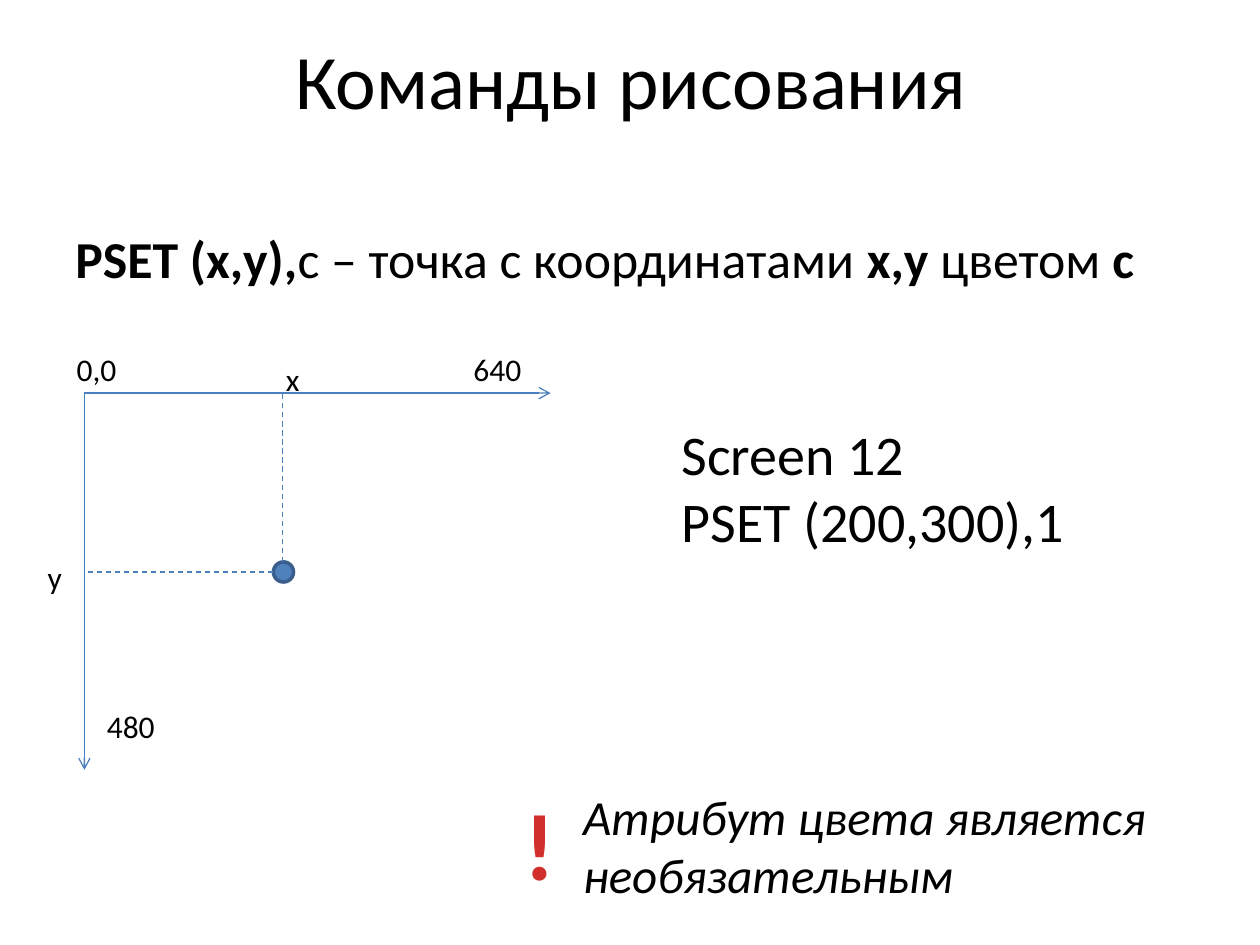
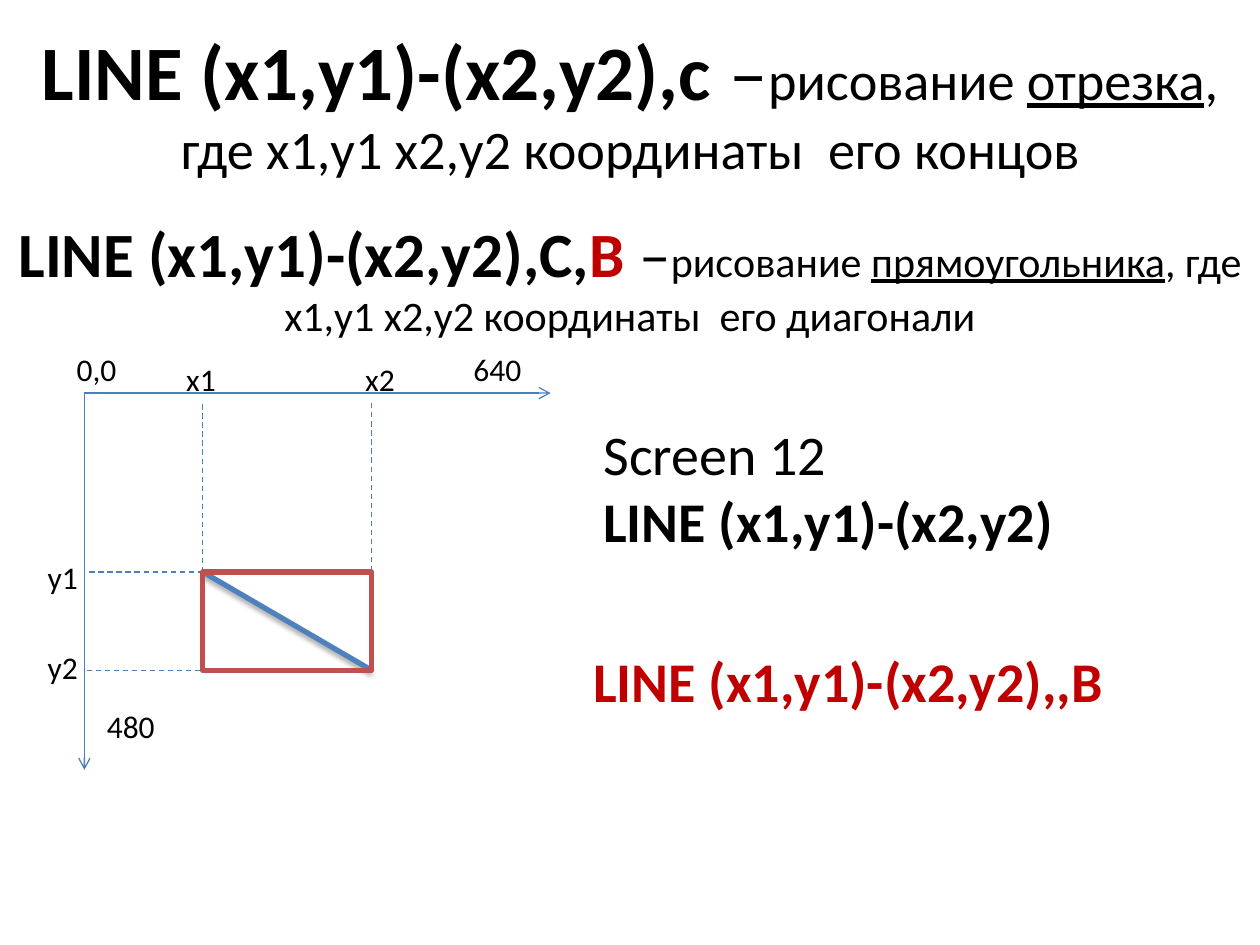
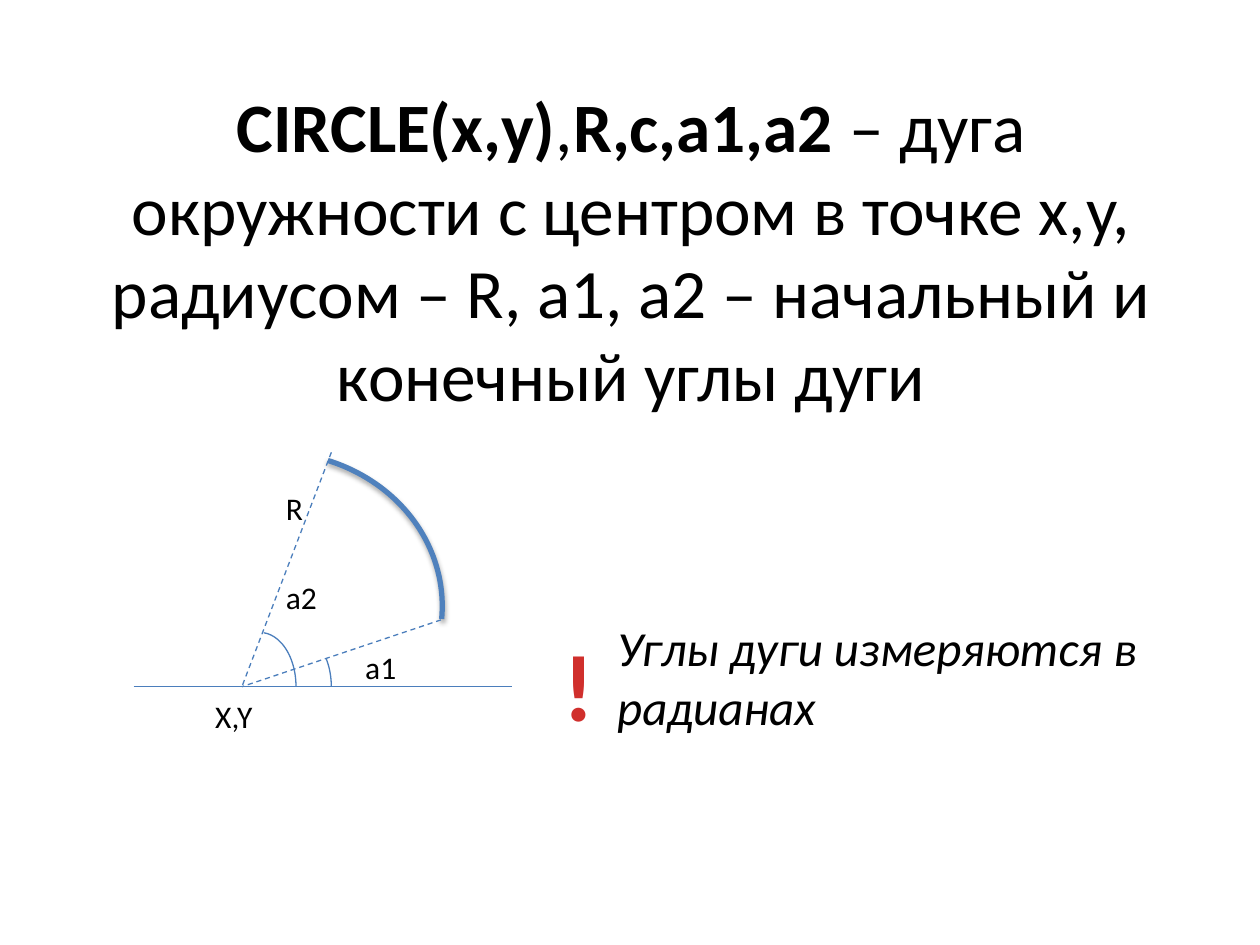
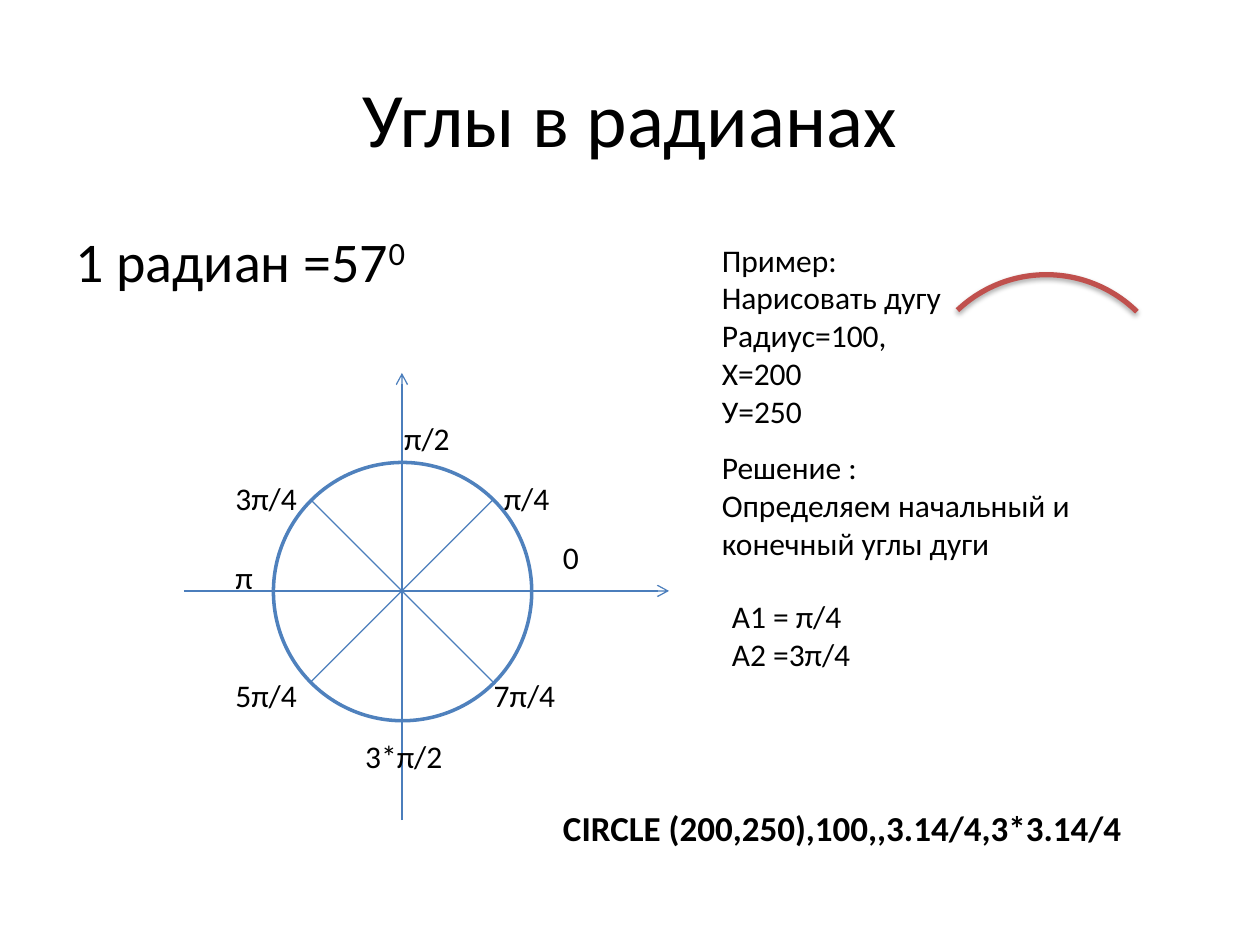
from pptx import Presentation
from pptx.dml.color import RGBColor
from pptx.enum.dml import MSO_LINE
from pptx.enum.shapes import MSO_CONNECTOR, MSO_SHAPE as Form
from pptx.enum.text import MSO_ANCHOR as Anchor, PP_ALIGN as Align
from pptx.oxml import parse_xml
from pptx.oxml.ns import nsdecls, qn
from pptx.util import Inches, Pt
from lxml.etree import SubElement

FONT = "Calibri"
BLACK = RGBColor(0x00, 0x00, 0x00)
BLUE = RGBColor(0x4F, 0x81, 0xBD)
THIN = RGBColor(0x4B, 0x7E, 0xBC)
EDGE = RGBColor(0x3A, 0x5F, 0x8C)
BRICK = RGBColor(0xC0, 0x50, 0x4D)
RED = RGBColor(0xC0, 0x00, 0x00)
GLOW = ((0, RGBColor(0xFC, 0x7C, 0x7A)),
        (75, RGBColor(0xD0, 0x2F, 0x2C)),
        (100, RGBColor(0xC7, 0x05, 0x00)))
BOLD = {"bold": True}
UNDER = {"underline": True}


def style(font, size=None, bold=None, italic=None, underline=None, color=None):
    if size:
        font.size = Pt(size)
    font.bold, font.italic, font.underline = bold, italic, underline
    if color is not None:
        font.color.rgb = color


def text(shapes, box, paras, size=18, align=Align.LEFT, anchor=Anchor.TOP,
         wrap=True, hang=0, color=BLACK, **look):
    """Add a text box; a paragraph is a string or a list of (text, look) runs."""
    shape = shapes.add_textbox(*map(Inches, box))
    frame = shape.text_frame
    frame.word_wrap, frame.vertical_anchor = wrap, anchor
    for i, runs in enumerate(paras):
        para = frame.add_paragraph() if i else frame.paragraphs[0]
        para.alignment = align
        if hang:
            props = para._p.get_or_add_pPr()
            props.set("marL", str(Inches(hang)))
            props.set("indent", str(-Inches(hang)))
            SubElement(props, qn("a:buNone"))
        para.font.name = FONT
        style(para.font, size, color=color, **look)
        for words, own in [(runs, {})] if isinstance(runs, str) else runs:
            run = para.add_run()
            run.text = words
            style(run.font, **own)
    return shape


def title(slide, box, runs, size=44):
    text(slide.shapes, box, [runs], size, Align.CENTER, Anchor.MIDDLE)


def label(shapes, x, y, words, wide=0.71):
    text(shapes, (x, y, wide, 0.4), [words])


def shade(shape):
    """Give a soft shadow below the shape."""
    effects = shape._element.spPr.find(qn("a:effectLst"))
    effects.append(parse_xml(
        f'<a:outerShdw {nsdecls("a")} blurRad="{Pt(3.1)}" dist="{Pt(1.8)}" '
        'dir="5400000" rotWithShape="0"><a:srgbClr val="000000">'
        '<a:alpha val="35000"/></a:srgbClr></a:outerShdw>'))


def line(shapes, start, end, color=THIN, width=0.75, dash=False, arrow=False):
    link = shapes.add_connector(MSO_CONNECTOR.STRAIGHT,
                                *map(Inches, (*start, *end)))
    link.line.color.rgb, link.line.width = color, Pt(width)
    if dash:
        link.line.dash_style = MSO_LINE.DASH
    if arrow:
        SubElement(link.line._get_or_add_ln(), qn("a:tailEnd"), type="arrow")
    SubElement(link._element.spPr, qn("a:effectLst"))
    return link


def form(shapes, kind, box, color, width, fill=None, angles=()):
    shape = shapes.add_shape(kind, *map(Inches, box))
    shape.shadow.inherit = False
    shape.line.color.rgb, shape.line.width = color, Pt(width)
    if fill is None:
        shape.fill.background()
    else:
        shape.fill.solid()
        shape.fill.fore_color.rgb = fill
    for i, angle in enumerate(angles):
        shape.adjustments[i] = angle * 0.6  # degrees to sixty-thousandths
    return shape


def axes(slide, x, y):
    """Draw the screen axes from their origin."""
    parts = slide.shapes.add_group_shape().shapes
    for end in ((x + 3.7, y), (x, y + 2.99)):
        line(parts, (x, y), end, arrow=True)
    for dx, dy, words in ((-0.16, -0.39, "0,0"), (2.99, -0.39, "640"),
                          (0.08, 2.44, "480")):
        label(parts, x + dx, y + dy, words, 0.63)


def remark(slide, mark, note, words):
    """Place a red exclamation mark and an italic note."""
    text(slide.shapes, (*note, 5.2, 1.04), [words], 28, italic=True)
    sign = text(slide.shapes, (*mark, 0.45, 1.01), ["!"], 54, Align.CENTER,
                wrap=False, bold=True)
    stops = "".join(f'<a:gs pos="{at * 1000}"><a:srgbClr val="{tone}"/></a:gs>'
                    for at, tone in GLOW)
    run = sign.text_frame.paragraphs[0].runs[0]
    run._r.get_or_add_rPr().append(parse_xml(
        f'<a:gradFill {nsdecls("a")}><a:gsLst>{stops}</a:gsLst>'
        '<a:lin ang="5400000"/></a:gradFill>'))


def point_slide(slide):
    shapes = slide.shapes
    title(slide, (0.51, 0, 9, 1.25), "Команды рисования")
    text(shapes, (0.5, 1.75, 9, 0.66), [[
        ("PSET (x,y),", BOLD), ("c – точка с координатами ", {}),
        ("x,y ", BOLD), ("цветом", {}), (" с", BOLD)]], 29.6, hang=0.38)
    x, y = 0.67, 3.12
    axes(slide, x, y)
    form(shapes, Form.OVAL, (x + 1.5, y + 1.34, 0.16, 0.16), EDGE, 2, BLUE)
    line(shapes, (x + 1.57, y + 1.34), (x + 1.57, y), dash=True)
    line(shapes, (x + 1.5, y + 1.42), (x, y + 1.42), dash=True)
    label(shapes, x + 1.5, y - 0.31, "x", 0.39)
    label(shapes, x - 0.39, y + 1.26, "y", 0.39)
    text(shapes, (5.31, 3.28, 3.7, 1.18), ["Screen 12", "PSET (200,300),1"], 32)
    remark(slide, (4.06, 6.19), (4.53, 6.19),
           "Атрибут цвета является необязательным")


def box_plot(slide, x, y):
    """Draw a rectangle and its diagonal on axes with the given origin."""
    shapes = slide.shapes
    axes(slide, x, y)
    left, right, top, low = x + 0.94, x + 2.28, y + 1.42, y + 2.2
    for side, base in ((left, top), (right, low)):
        line(shapes, (side, base), (side, y + 0.08), dash=True)
        line(shapes, (side, base), (x, base), dash=True)
    for dx, dy, words in ((0.71, -0.31, "x1"), (2.13, -0.31, "x2"),
                          (-0.39, 1.26, "y1"), (-0.39, 1.97, "y2")):
        label(shapes, x + dx, y + dy, words, 0.47)
    shade(line(shapes, (left, top), (right, low), BLUE, 3))
    form(shapes, Form.RECTANGLE, (left, top, right - left, low - top), BRICK, 3)


def line_slide(slide):
    title(slide, (0, 0, 10, 1.62), [
        ("LINE (x1,y1)-(x2,y2),c ", {"size": 44, **BOLD}), ("–", {"size": 44}),
        ("рисование ", {}), ("отрезка", UNDER),
        (", где x1,y1 x2,y2 координаты  его концов", {})], 31)
    title(slide, (0, 1.39, 10, 1.62), [
        ("LINE (x1,y1)-(x2,y2),С,", {"size": 36, **BOLD}),
        ("B ", {"size": 36, "color": RED, **BOLD}), ("–", {"size": 36}),
        ("рисование ", {}), ("прямоугольника", UNDER),
        (", где x1,y1 x2,y2 координаты  его диагонали", {})], 24)
    box_plot(slide, 0.67, 3.12)
    text(slide.shapes, (4.69, 3.28, 4.33, 1.18),
         ["Screen 12", [("LINE (x1,y1)-(x2,y2)", BOLD)]], 32)
    text(slide.shapes, (4.61, 5.08, 4.33, 0.64), ["LINE (x1,y1)-(x2,y2),,B"],
         32, color=RED, bold=True)


def arc_plot(slide, x, y):
    """Draw an arc, its radii and angles around the given centre."""
    parts = slide.shapes.add_group_shape().shapes
    shade(form(parts, Form.ARC, (x - 1.09, y - 1.86, 2.68, 2.44), BLUE, 3,
               angles=(290.52, 4.4)))
    for dx, dy in ((1.58, -0.53), (0.71, -1.86)):
        line(parts, (x + dx, y + dy), (x, y), dash=True)
    line(parts, (x - 0.86, y), (x + 2.14, y))
    for dx, start in ((0.14, 318.11), (-0.14, 273.83)):
        form(parts, Form.ARC, (x + dx, y - 0.43, 0.57, 0.86), THIN, 0.75,
             angles=(start, 0))
    for dx, dy, words in ((0.88, -0.36, "a1"), (0.25, -0.91, "a2"),
                          (-0.31, 0.03, "X,Y"), (0.25, -1.62, "R")):
        label(parts, x + dx, y + dy, words)


def arc_slide(slide):
    title(slide, (0.51, 0.68, 9, 2.6), [
        ("CIRCLE(x,y)", BOLD), (",", {}), ("R,c,a1,a2", BOLD),
        (" – дуга окружности с центром в точке x,y, радиусом – R, а1, а2 – "
         "начальный и конечный углы дуги", {})], 39.6)
    arc_plot(slide, 1.92, 5.45)
    remark(slide, (4.37, 4.93), (4.8, 4.85), "Углы дуги измеряются в радианах")


def wheel(slide, x, y):
    """Draw the circle of angles around the given centre."""
    shapes = slide.shapes
    line(shapes, (x, y + 1.82), (x, y - 1.73), arrow=True)
    line(shapes, (x - 1.73, y), (x + 2.12, y), arrow=True)
    form(shapes, Form.OVAL, (x - 1.02, y - 1.02, 2.05, 2.05), BLUE, 2)
    reach = 0.72
    for sign in (1, -1):
        line(shapes, (x - reach, y - sign * reach),
             (x + reach, y + sign * reach))
    for dx, dy, words in (
            (1.18, -0.47, "0"), (0.71, -0.94, "π/4"), (-0.08, -1.41, "π/2"),
            (-1.42, -0.94, "3π/4"), (-1.42, -0.31, "π"), (-1.42, 0.63, "5π/4"),
            (-0.39, 1.11, "3*π/2"), (0.63, 0.63, "7π/4")):
        label(shapes, x + dx, y + dy, words, 0.87)


def sample(slide, x, y):
    """Place the worked example below its top left corner."""
    shapes = slide.shapes
    shade(form(shapes, Form.ARC, (x + 1.65, y + 0.32, 2.05, 2.05), BRICK, 3,
               angles=(226.46, 314.5)))
    for dx, dy, high, paras in (
            (0, 0, 1.62, ["Пример:", "Нарисовать дугу", "Радиус=100,",
                          "Х=200", "У=250"]),
            (0, 1.65, 1.01, ["Решение :",
                             "Определяем начальный и конечный углы дуги"]),
            (0.08, 2.83, 0.71, ["A1 = π/4", "A2 =3π/4"])):
        text(shapes, (x + dx, y + dy, 3.31, high), paras)


def angle_slide(slide):
    title(slide, (0.5, 0.3, 9, 1.25), "Углы в радианах")
    fact = text(slide.shapes, (0.5, 1.75, 3.48, 0.74),
                [[("1 радиан =57", {}), ("0", {})]], 32, hang=0.38)
    power = fact.text_frame.paragraphs[0].runs[1]
    power._r.get_or_add_rPr().set("baseline", "30000")
    wheel(slide, 3.19, 4.69)
    sample(slide, 5.63, 1.86)
    text(slide.shapes, (4.37, 6.35, 4.96, 0.44),
         ["CIRCLE (200,250),100,,3.14/4,3*3.14/4"], 20, bold=True)


def main():
    deck = Presentation()
    deck.slide_width, deck.slide_height = Inches(10), Inches(7.5)
    for build in (point_slide, line_slide, arc_slide, angle_slide):
        build(deck.slides.add_slide(deck.slide_layouts[6]))
    deck.save("out.pptx")


if __name__ == "__main__":
    main()
